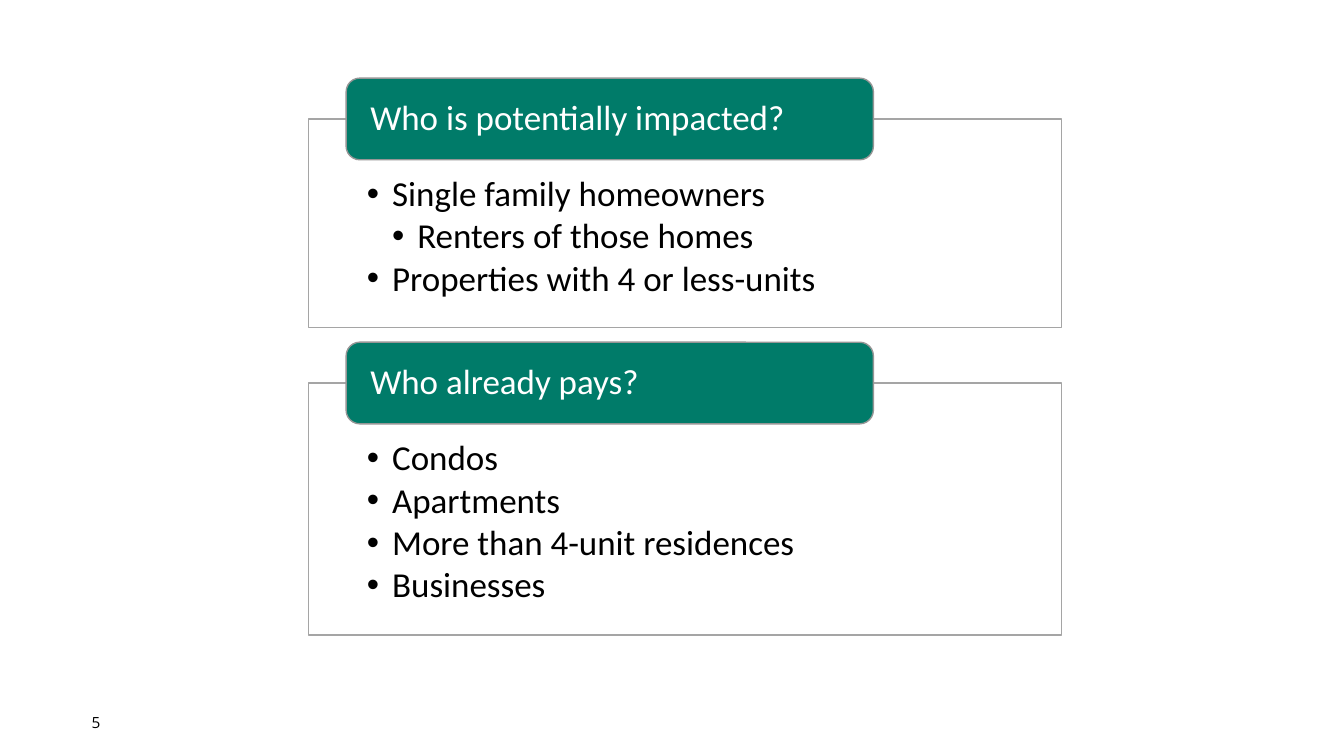
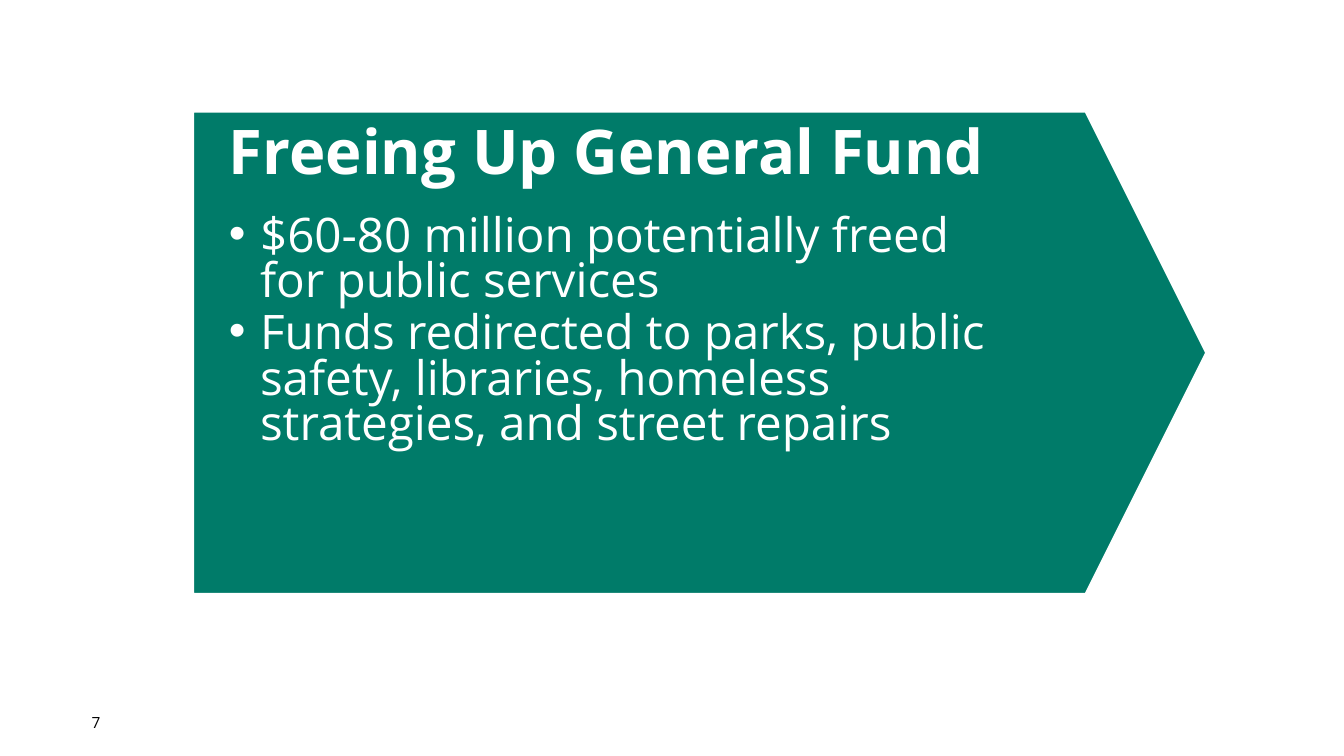
from lxml.etree import SubElement
from pptx import Presentation
from pptx.dml.color import RGBColor
from pptx.enum.shapes import MSO_SHAPE
from pptx.enum.text import MSO_ANCHOR, MSO_AUTO_SIZE, PP_ALIGN
from pptx.oxml.ns import qn
from pptx.util import Pt

# Shared style: 100 px to the inch
PX = 9144
GREEN, WHITE, BLACK = "007B69", "FFFFFF", "000000"
CARD_LINE, TAB_LINE = "A5A5A5", "969696"
TITLE_ONLY, BLANK = 5, 6


def rgb(color):
    return RGBColor.from_string(color)


def px(*values):
    return [int(v * PX) for v in values]


def frame(sp, insets, anchor):
    """Set up the text frame with insets left, top, right, bottom."""
    tf = sp.text_frame
    tf.word_wrap = True
    tf.auto_size = MSO_AUTO_SIZE.NONE
    tf.vertical_anchor = anchor
    (tf.margin_left, tf.margin_top,
     tf.margin_right, tf.margin_bottom) = px(*insets)
    return tf


def add_shape(s, kind, box, fill, line):
    sp = s.shapes.add_shape(kind, *px(*box))
    sp.shadow.inherit = False
    sp.fill.solid()
    sp.fill.fore_color.rgb = rgb(fill)
    sp.line.color.rgb = rgb(line)
    sp.line.width = Pt(1)
    return sp


def add_bullet(p, level, indent):
    pPr = p._p.get_or_add_pPr()
    pPr.set("marL", str(indent * (level + 1) * PX))
    pPr.set("indent", str(-indent * PX))
    SubElement(pPr, qn("a:buFont")).set("typeface", "Arial")
    SubElement(pPr, qn("a:buChar")).set("char", "•")
    p.level = level


def write(p, text, font, size, color, spacing=1.0, after=0, bold=False):
    p.alignment = PP_ALIGN.LEFT
    p.line_spacing = spacing
    p.space_before = Pt(0)
    p.space_after = Pt(after)
    r = p.add_run()
    r.text = text
    r.font.name = font
    r.font.size = Pt(size)
    r.font.bold = bold
    r.font.color.rgb = rgb(color)


def write_bullets(tf, items, indent, **style):
    for i, (level, text) in enumerate(items):
        p = tf.add_paragraph() if i else tf.paragraphs[0]
        add_bullet(p, level, indent)
        write(p, text, **style)


def add_slide(prs, layout, number):
    """New slide with its page number at the bottom left."""
    s = prs.slides.add_slide(prs.slide_layouts[layout])
    sp = s.shapes.add_textbox(*px(81, 697, 46, 40))
    tf = frame(sp, (10, 5, 10, 5), MSO_ANCHOR.MIDDLE)
    write(tf.paragraphs[0], number, "Open Sans", 11, BLACK)
    return s


def add_card(s, box, heading, items):
    """Outlined list with a green tab across its top edge."""
    left, top, width, height = box
    card = add_shape(s, MSO_SHAPE.RECTANGLE, box, WHITE, CARD_LINE)
    tf = frame(card, (58, 57, 58, 19), MSO_ANCHOR.TOP)
    write_bullets(tf, items, 25, font="Calibri", size=25, color=BLACK,
                  spacing=0.9, after=3.3)

    tab_height = 81
    tab = add_shape(s, MSO_SHAPE.ROUNDED_RECTANGLE,
                    (left + width * 0.05, top - tab_height / 2,
                     width * 0.7, tab_height), GREEN, TAB_LINE)
    tf = frame(tab, (20, 0, 20, 0), MSO_ANCHOR.MIDDLE)
    write(tf.paragraphs[0], heading, "Calibri", 25, WHITE, spacing=0.9)


def add_arrow_panel(s, box, title, items):
    """Pentagon arrow with the slide title above its bullets."""
    left, top, width, height = box
    title_height = 103
    panel = add_shape(s, MSO_SHAPE.PENTAGON, box, GREEN, WHITE)
    panel.adjustments[0] = 0.25
    tf = frame(panel, (35, title_height, 142, 12), MSO_ANCHOR.TOP)
    write_bullets(tf, items, 31, font="Open Sans", size=34, color=WHITE,
                  spacing=0.8, after=4.3)

    # Title placeholder, brought in front of the panel
    sp = s.shapes.title
    sp.left, sp.top, sp.width, sp.height = px(left, top, 944, title_height)
    tf = frame(sp, (35, 12, 100, 0), MSO_ANCHOR.TOP)
    write(tf.paragraphs[0], title, "Open Sans", 44, WHITE,
          spacing=0.85, bold=True)
    s.shapes.element.append(sp.element)


def main():
    prs = Presentation()
    prs.slide_width, prs.slide_height = px(1333, 750)

    # Who pays
    s = add_slide(prs, BLANK, "5")
    add_card(s, (306, 118, 747, 207), "Who is potentially impacted?", [
        (0, "Single family homeowners"),
        (1, "Renters of those homes"),
        (0, "Properties with 4 or less-units"),
    ])
    add_card(s, (306, 380, 747, 250), "Who already pays?", [
        (0, "Condos"),
        (0, "Apartments"),
        (0, "More than 4-unit residences"),
        (0, "Businesses"),
    ])

    # General fund
    s = add_slide(prs, TITLE_ONLY, "7")
    add_arrow_panel(s, (192, 111, 1004, 478), "Freeing Up General Fund", [
        (0, "$60-80 million potentially freed for public services"),
        (0, "Funds redirected to parks, public safety, libraries, "
            "homeless strategies, and street repairs"),
    ])

    prs.save("out.pptx")


if __name__ == "__main__":
    main()
